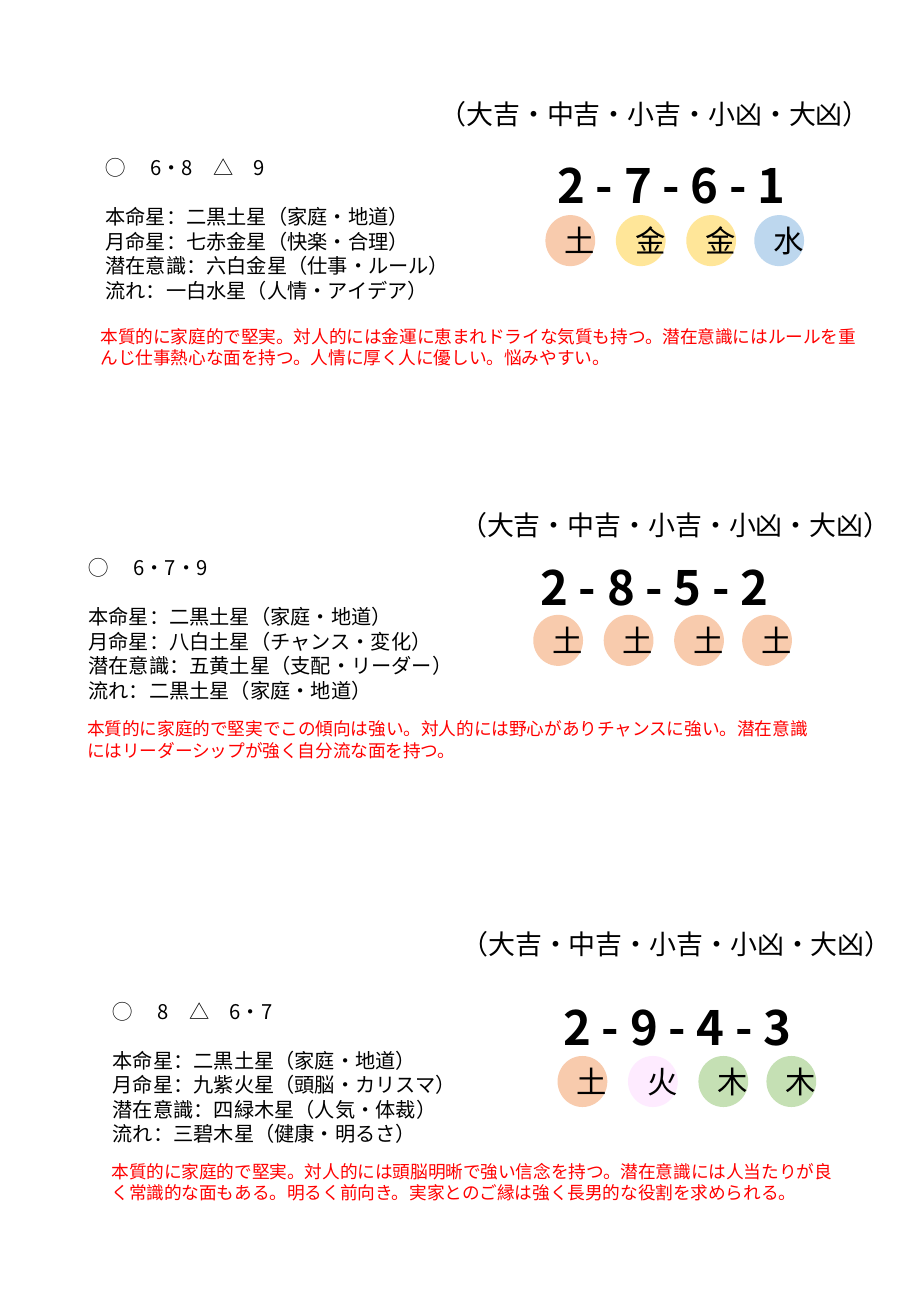
from pptx import Presentation
from pptx.dml.color import RGBColor
from pptx.enum.shapes import MSO_SHAPE
from pptx.enum.text import MSO_ANCHOR, MSO_AUTO_SIZE, PP_ALIGN
from pptx.oxml.ns import qn
from pptx.util import Inches, Pt
from lxml import etree

OVAL = MSO_SHAPE.OVAL
MIDDLE = MSO_ANCHOR.MIDDLE
CENTER = PP_ALIGN.CENTER
GROW = MSO_AUTO_SIZE.SHAPE_TO_FIT_TEXT

FONT = "Noto Sans CJK JP"
LINE_RATIO = 1.21
BLACK, RED = "000000", "FF0000"
ELEMENT_FILLS = {"土": "F8CBAD", "金": "FFE699", "水": "BDD7EE",
                 "火": "FEEBFF", "木": "C5E0B4"}
ELEMENT_OFFSETS = (0, 0.58, 1.16, 1.72)
FORTUNES = "（大吉・中吉・小吉・小凶・大凶）"

# Each box is left, top, width of the star list; shifts are measured from its corner
READINGS = [
    {"box": (0.77, 1.23, 3.23),
     "fortunes": (2.75, -0.48), "score": (3.72, 0), "elements": (3.72, 0.54),
     "note": (-0.04, 1.4, 6.44),
     "lines": ["◯　 6・8　△　9", "本命星：二黒土星（家庭・地道）",
               "月命星：七赤金星（快楽・合理）", "潜在意識：六白金星（仕事・ルール）",
               "流れ：一白水星（人情・アイデア）"],
     "numbers": "2761", "signs": "土金金水",
     "summary": "本質的に家庭的で堅実。対人的には金運に恵まれドライな気質も持つ。"
                "潜在意識にはルールを重んじ仕事熱心な面を持つ。人情に厚く人に優しい。悩みやすい。"},
    {"box": (0.63, 4.52, 3.5),
     "fortunes": (3.06, -0.39), "score": (3.72, 0.02), "elements": (3.76, 0.54),
     "note": (-0.01, 1.34, 6.26),
     "lines": ["◯　 6・7・9", "本命星：二黒土星（家庭・地道）",
               "月命星：八白土星（チャンス・変化）", "潜在意識：五黄土星（支配・リーダー）",
               "流れ：二黒土星（家庭・地道）"],
     "numbers": "2852", "signs": "土土土土",
     "summary": "本質的に家庭的で堅実でこの傾向は強い。対人的には野心がありチャンスに強い。"
                "潜在意識にはリーダーシップが強く自分流な面を持つ。"},
    {"box": (0.83, 8.17, 3.54),
     "fortunes": (2.87, -0.59), "score": (3.71, -0.01), "elements": (3.76, 0.52),
     "note": (-0.01, 1.33, 6.26),
     "lines": ["◯　 8　△　6・7", "本命星：二黒土星（家庭・地道）",
               "月命星：九紫火星（頭脳・カリスマ）", "潜在意識：四緑木星（人気・体裁）",
               "流れ：三碧木星（健康・明るさ）"],
     "numbers": "2943", "signs": "土火木木",
     "summary": "本質的に家庭的で堅実。対人的には頭脳明晰で強い信念を持つ。"
                "潜在意識には人当たりが良く常識的な面もある。明るく前向き。"
                "実家とのご縁は強く長男的な役割を求められる。"},
]


def color(value):
    return RGBColor.from_string(value)


def write(frame, lines, size, ink=BLACK, bold=False, **paragraph_format):
    """Fill a text frame, one paragraph per line."""
    for index, line in enumerate(lines):
        para = frame.paragraphs[0] if index == 0 else frame.add_paragraph()
        settings = {"line_spacing": Pt(size * LINE_RATIO), **paragraph_format}
        for name, value in settings.items():
            setattr(para, name, value)
        span = para.add_run()
        span.text = line
        for name, value in {"name": FONT, "size": Pt(size), "bold": bold}.items():
            setattr(span.font, name, value)
        span.font.color.rgb = color(ink)
        east_asian = etree.SubElement(span.font._element, qn("a:ea"))
        east_asian.set("typeface", FONT)


def add_text(page, box, lines, size, wrap=True, **text_format):
    frame = page.shapes.add_textbox(*map(Inches, box)).text_frame
    frame.word_wrap = wrap
    frame.auto_size = GROW
    write(frame, lines, size, **text_format)
    return frame


def add_element(page, left, top, sign):
    circle = page.shapes.add_shape(OVAL, *map(Inches, (left, top, 0.41, 0.42)))
    circle.shadow.inherit = False
    circle.fill.solid()
    circle.fill.fore_color.rgb = color(ELEMENT_FILLS[sign])
    circle.line.fill.background()
    circle.text_frame.word_wrap = True
    circle.text_frame.vertical_anchor = MIDDLE
    write(circle.text_frame, [sign], 18, alignment=CENTER)


def add_reading(page, reading):
    left, top, width = reading["box"]

    def place(part):
        across, down = reading[part][:2]
        return left + across, top + down

    # Star list, with a gap under the lucky numbers
    stars = add_text(page, (left, top, width, 1.31), reading["lines"], 12)
    stars.paragraphs[0].space_after = Pt(12 * LINE_RATIO)

    # Score and its element circles
    add_text(page, (*place("score"), 2.52, 0.57),
             [" - ".join(reading["numbers"])], 28, bold=True)
    first_left, circle_top = place("elements")
    for offset, sign in zip(ELEMENT_OFFSETS, reading["signs"]):
        add_element(page, first_left + offset, circle_top, sign)

    # Summary and fortune scale
    add_text(page, (*place("note"), reading["note"][2], 0.45),
             [reading["summary"]], 10.5, ink=RED)
    add_text(page, (*place("fortunes"), 3.79, 0.37), [FORTUNES], 16, wrap=False)


def main():
    deck = Presentation()
    deck.slide_width, deck.slide_height = Inches(7.5), Inches(10.83)
    page = deck.slides.add_slide(deck.slide_layouts[6])
    for reading in READINGS:
        add_reading(page, reading)
    deck.save("out.pptx")


if __name__ == "__main__":
    main()
